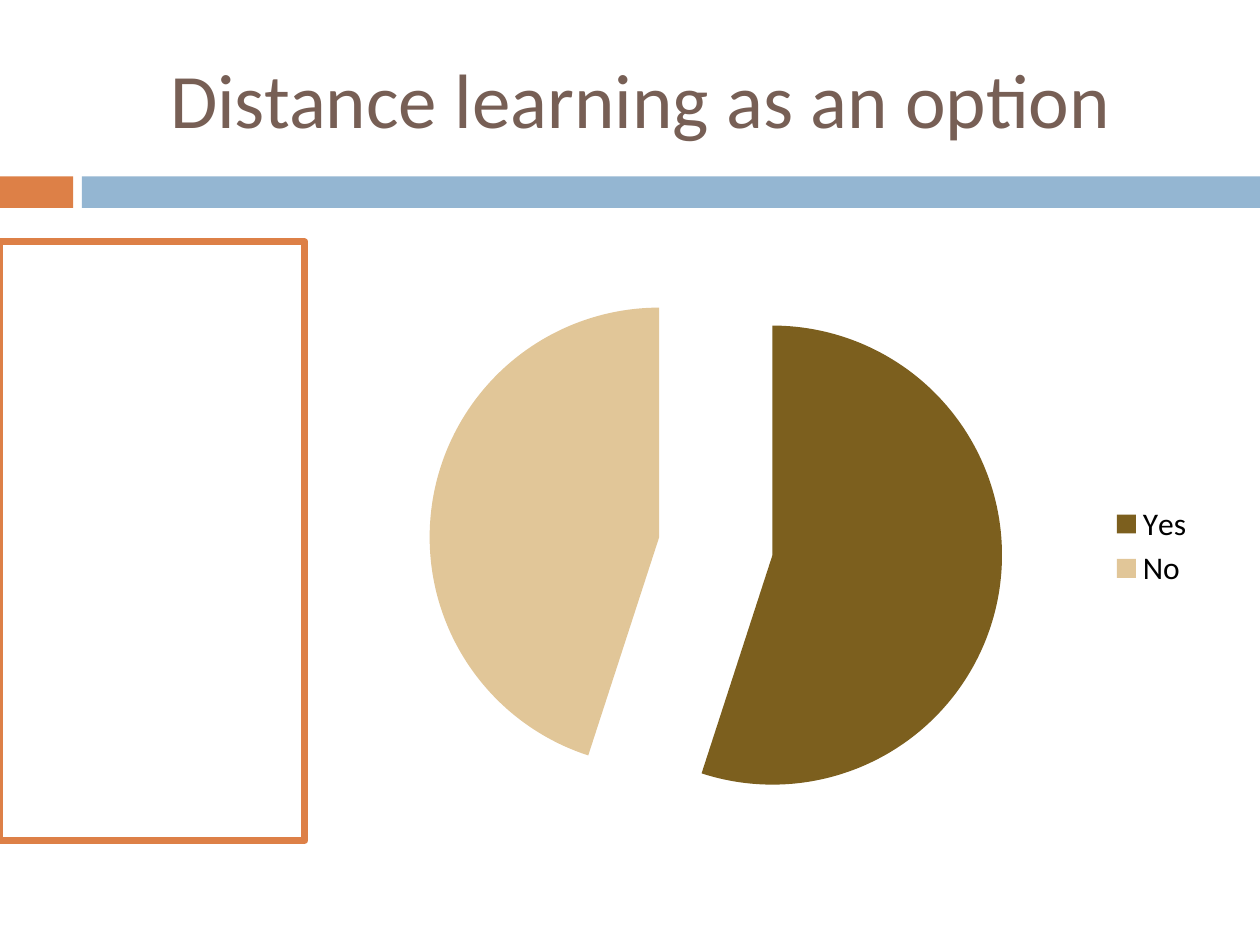
from pptx import Presentation, util as u
from pptx.chart.data import CategoryChartData
from pptx.dml.color import RGBColor
from pptx.enum import chart as ch, shapes, text
from pptx.oxml import parse_xml
from pptx.oxml.ns import nsdecls

ORANGE, BLUE, BROWN = "DD8047", "94B6D2", "775F55"


def rgb(value):
    return RGBColor.from_string(value)


def inches(box):
    return [u.Inches(n) for n in box]


def set_font(font, size, color):
    fmt = {"name": "Calibri", "size": u.Pt(size), "bold": False}
    for name, value in fmt.items():
        setattr(font, name, value)
    font.color.rgb = rgb(color)


def add_rect(s, box, fill, line=None):
    sp = s.shapes.add_shape(shapes.MSO_SHAPE.RECTANGLE, *inches(box))
    sp.shadow.inherit = False
    sp.fill.solid()
    sp.fill.fore_color.rgb = rgb(fill)
    if line:
        sp.line.color.rgb = rgb(line)
        sp.line.width = u.Pt(4)
    else:
        sp.line.fill.background()


def add_band(s, box, tab=0.58, gap=0.07):
    x, y, w, h = box
    add_rect(s, (x, y, tab, h), ORANGE)
    add_rect(s, (x + tab + gap, y, w - tab - gap, h), BLUE)


def add_title(s, box, words):
    sp = s.shapes.title
    for name, value in zip(("left", "top", "width", "height"), inches(box)):
        setattr(sp, name, value)
    tf = sp.text_frame
    tf.word_wrap = True
    tf.vertical_anchor = text.MSO_ANCHOR.MIDDLE
    p = tf.paragraphs[0]
    p.alignment = text.PP_ALIGN.CENTER
    r = p.add_run()
    r.text = words
    set_font(r.font, 44, BROWN)


def add_pie(s, box, values, colors):
    data = CategoryChartData()
    data.categories = list(values)
    data.add_series("Series 1", list(values.values()))
    chart = s.shapes.add_chart(ch.XL_CHART_TYPE.PIE, *inches(box), data).chart
    set_font(chart.font, 18, "000000")
    chart.has_title = False
    chart.has_legend = True
    chart.legend.position = ch.XL_LEGEND_POSITION.RIGHT
    chart.legend.include_in_layout = False
    plot = chart.plots[0]
    plot.vary_by_categories = True
    ser = plot.series[0]
    for i, color in enumerate(colors):
        fill = ser.points[i].format.fill
        fill.solid()
        fill.fore_color.rgb = rgb(color)
    explosion = parse_xml(f'<c:explosion {nsdecls("c")} val="25"/>')
    ser._element.find(".//{*}dPt").addprevious(explosion)


def main():
    prs = Presentation()
    prs.slide_width, prs.slide_height = u.Inches(10), u.Inches(7.5)
    s = prs.slides.add_slide(prs.slide_layouts[5])
    add_band(s, (0, 1.4, 10, 0.25))
    add_title(s, (0.67, 0.3, 8.83, 0.95), "Distance learning as an option")
    add_rect(s, (0, 1.92, 2.42, 4.75), "FFFFFF", ORANGE)
    add_pie(s, (2.58, 1.92, 7, 4.83), {"Yes": 55, "No": 45}, ("7C5F1E", "E1C698"))
    prs.save("out.pptx")


if __name__ == "__main__":
    main()
